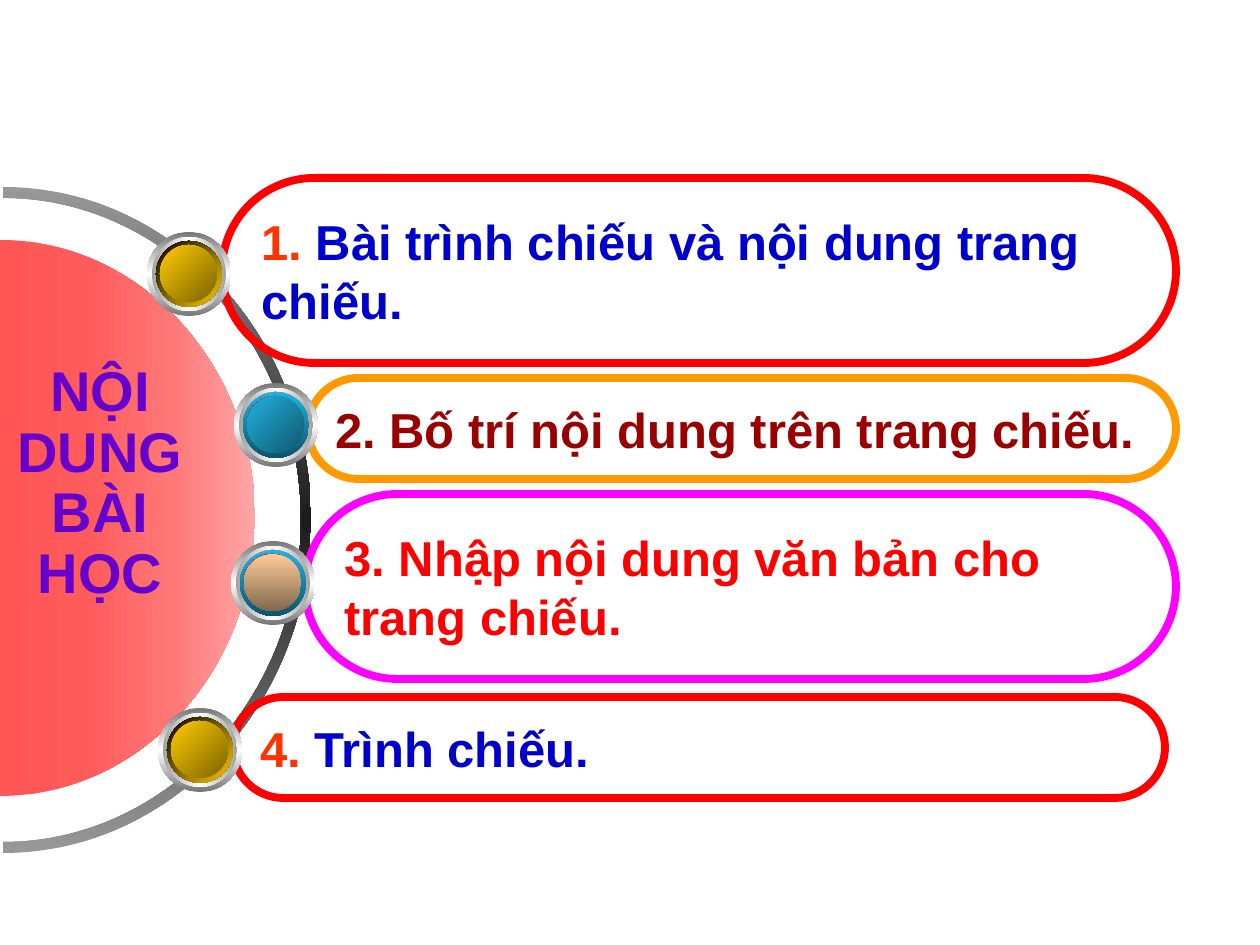
import pptx
import pptx.dml.color
import pptx.enum.shapes
import pptx.enum.text
import pptx.oxml.ns
import pptx.util
from lxml import etree

RGB = pptx.dml.color.RGBColor
SHAPES = pptx.enum.shapes.MSO_SHAPE
SCALE = 914400 / 126
FONT = "Arial"
ROUNDNESS = 0.55

WHITE = RGB(0xFF, 0xFF, 0xFF)
BLACK = RGB(0x00, 0x00, 0x00)
RED = RGB(0xFF, 0x00, 0x00)
DARK_RED = RGB(0xC3, 0x00, 0x00)
MAROON = RGB(0x9A, 0x00, 0x00)
VERMILION = RGB(0xFF, 0x33, 0x00)
ORANGE = RGB(0xFF, 0x99, 0x00)
MAGENTA = RGB(0xFF, 0x00, 0xFF)
BLUE = RGB(0x00, 0x00, 0xCC)
PURPLE = RGB(0x66, 0x00, 0xCC)
GOLD = RGB(0xFF, 0xCC, 0x00)
DARK_GOLD = RGB(0x7C, 0x63, 0x00)
CYAN = RGB(0x21, 0xB3, 0xE1)
TEAL = RGB(0x0F, 0x53, 0x68)
DARK_CYAN = RGB(0x10, 0x57, 0x6D)
PEACH = RGB(0xFF, 0xCC, 0x99)
BROWN = RGB(0x82, 0x68, 0x4E)
STEEL = RGB(0x76, 0x76, 0x76)
SILVER = RGB(0xA2, 0xA2, 0xA2)
ARC_GREY = RGB(0x98, 0x98, 0x98)
ARC_BLACK = RGB(0x1C, 0x1C, 0x1C)
CORAL = RGB(0xFF, 0x55, 0x55)
LIGHT_CORAL = RGB(0xFF, 0x5B, 0x5B)
ROSE = RGB(0xFF, 0x77, 0x77)
PINK = RGB(0xFF, 0xA5, 0xA5)

GOLD_BUTTON = (([BLACK, GOLD], 45), ([GOLD, DARK_GOLD], 45))
CYAN_BUTTON = (([CYAN, TEAL], 90), ([CYAN, DARK_CYAN], 45))
PEACH_BUTTON = (([CYAN, TEAL], 90), ([PEACH, BROWN], 90))

UPPER_ITEMS = [
    ((308, 378, 868, 101), ORANGE, (234, 383), CYAN_BUTTON,
     [("2. Bố trí nội dung trên trang chiếu.", MAROON)]),
    ((222, 178, 954, 185), RED, (147, 232), GOLD_BUTTON,
     [("1. ", VERMILION), ("Bài trình chiếu và nội dung trang chiếu.", BLUE)]),
]
LOWER_ITEMS = [
    ((305, 494, 871, 185), MAGENTA, (231, 541), PEACH_BUTTON,
     [("3. Nhập nội dung văn bản cho trang chiếu.", RED)]),
    ((233, 697, 932, 101), RED, (158, 708), GOLD_BUTTON,
     [("4. ", VERMILION), ("Trình chiếu.", BLUE)]),
]


def px(*lengths):
    """Turn px lengths into EMU."""
    return [pptx.util.Emu(round(length * SCALE)) for length in lengths]


def apply_format(target, values):
    """Set each attribute named in a dict of format values."""
    for name, value in values.items():
        setattr(target, name, value)


def paint_gradient(shape, colors, angle):
    """Fill a shape with evenly spaced colours, the angle running clockwise."""
    qn = pptx.oxml.ns.qn
    shape.shadow.inherit = False
    shape.line.fill.background()
    shape.fill.gradient()
    gradient = shape._element.spPr.find(qn("a:gradFill"))
    stops = gradient.find(qn("a:gsLst"))
    for stop in list(stops):
        stops.remove(stop)
    for index, color in enumerate(colors):
        position = str(100000 * index // (len(colors) - 1))
        stop = etree.SubElement(stops, qn("a:gs"), pos=position)
        etree.SubElement(stop, qn("a:srgbClr"), val=str(color))
    gradient.find(qn("a:lin")).set("ang", str(angle * 60000))


def half_ellipse(center, radii):
    """List the curve points of a right half ellipse from top to bottom."""
    (x, y), (width, height) = center, radii
    upper = [(0, -1), (ROUNDNESS, -1), (1, -ROUNDNESS), (1, 0)]
    lower = [(across, -down) for across, down in upper[-2::-1]]
    return [(x + across * width, y + down * height) for across, down in upper + lower]


def add_outline(page, halves, colors, angle):
    """Add a closed freeform of curved half ellipses with a gradient fill."""
    qn = pptx.oxml.ns.qn
    points = [point for half in halves for point in half]
    builder = page.shapes.build_freeform(*points[0], scale=SCALE)
    builder.add_line_segments(points[1:], close=True)
    shape = builder.convert_to_shape()
    lines = list(shape._element.iter(qn("a:lnTo")))
    for half in range(len(halves)):
        for start in (7 * half, 7 * half + 3):
            curve = etree.Element(qn("a:cubicBezTo"))
            lines[start].addprevious(curve)
            for line in lines[start:start + 3]:
                curve.append(line[0])
                line.getparent().remove(line)
    paint_gradient(shape, colors, angle)


def write_text(box, spans, size, paragraph_format, anchor):
    """Write one paragraph of coloured bold spans."""
    apply_format(box.text_frame, {"word_wrap": True, "vertical_anchor": anchor})
    para = box.text_frame.paragraphs[0]
    apply_format(para, paragraph_format)
    for text, color in spans:
        span = para.add_run()
        span.text = text
        apply_format(span.font, {"name": FONT, "size": pptx.util.Pt(size), "bold": True})
        span.font.color.rgb = color


def add_bar(page, bounds, color, spans):
    """Add an outlined pill with its lesson item."""
    bar = page.shapes.add_shape(SHAPES.ROUNDED_RECTANGLE, *px(*bounds))
    bar.adjustments[0] = 0.5
    bar.shadow.inherit = False
    bar.fill.background()
    bar.line.color.rgb = color
    bar.line.width = pptx.util.Pt(4.5)
    write_text(bar, spans, 28, {"alignment": pptx.enum.text.PP_ALIGN.LEFT},
               pptx.enum.text.MSO_ANCHOR.MIDDLE)


def add_button(page, corner, faces):
    """Add a grouped round button made of concentric gradient discs."""
    rim, center = faces
    discs = [
        (0, 84, ([STEEL, WHITE, STEEL], 90)),
        (5, 74, ([SILVER, WHITE, SILVER], 0)),
        (9, 65, ([WHITE, RED, WHITE], 45)),
        (9, 66, rim),
        (13, 56, ([DARK_RED, RED, DARK_RED], 315)),
        (13, 57, center),
    ]
    group = page.shapes.add_group_shape()
    for inset, size, (colors, angle) in discs:
        bounds = px(corner[0] + inset, corner[1] + inset, size, size)
        paint_gradient(group.shapes.add_shape(SHAPES.OVAL, *bounds), colors, angle)


def add_items(page, items):
    """Add each lesson item as a bar with its button."""
    for bounds, color, corner, faces, spans in items:
        add_bar(page, bounds, color, spans)
        add_button(page, corner, faces)


def add_title(page):
    """Add the lesson heading over the half disc."""
    box = page.shapes.add_textbox(*px(0, 357, 200, 257))
    write_text(box, [("NỘI DUNG BÀI HỌC", PURPLE)], 32,
               {"alignment": pptx.enum.text.PP_ALIGN.CENTER, "line_spacing": 0.9},
               pptx.enum.text.MSO_ANCHOR.TOP)


def main():
    """Build the lesson contents slide."""
    deck = pptx.Presentation()
    deck.slide_width, deck.slide_height = px(1260, 945)
    page = deck.slides.add_slide(deck.slide_layouts[6])
    outer = half_ellipse((3, 520), (308, 333))
    inner = half_ellipse((3, 520), (298, 322))
    add_outline(page, [outer, inner[::-1]], [ARC_GREY, ARC_BLACK, ARC_GREY], 90)
    disc = half_ellipse((0, 518), (255, 278))
    add_outline(page, [disc], [CORAL, LIGHT_CORAL, ROSE, PINK], 0)
    add_items(page, UPPER_ITEMS)
    add_title(page)
    add_items(page, LOWER_ITEMS)
    deck.save("out.pptx")


if __name__ == "__main__":
    main()
